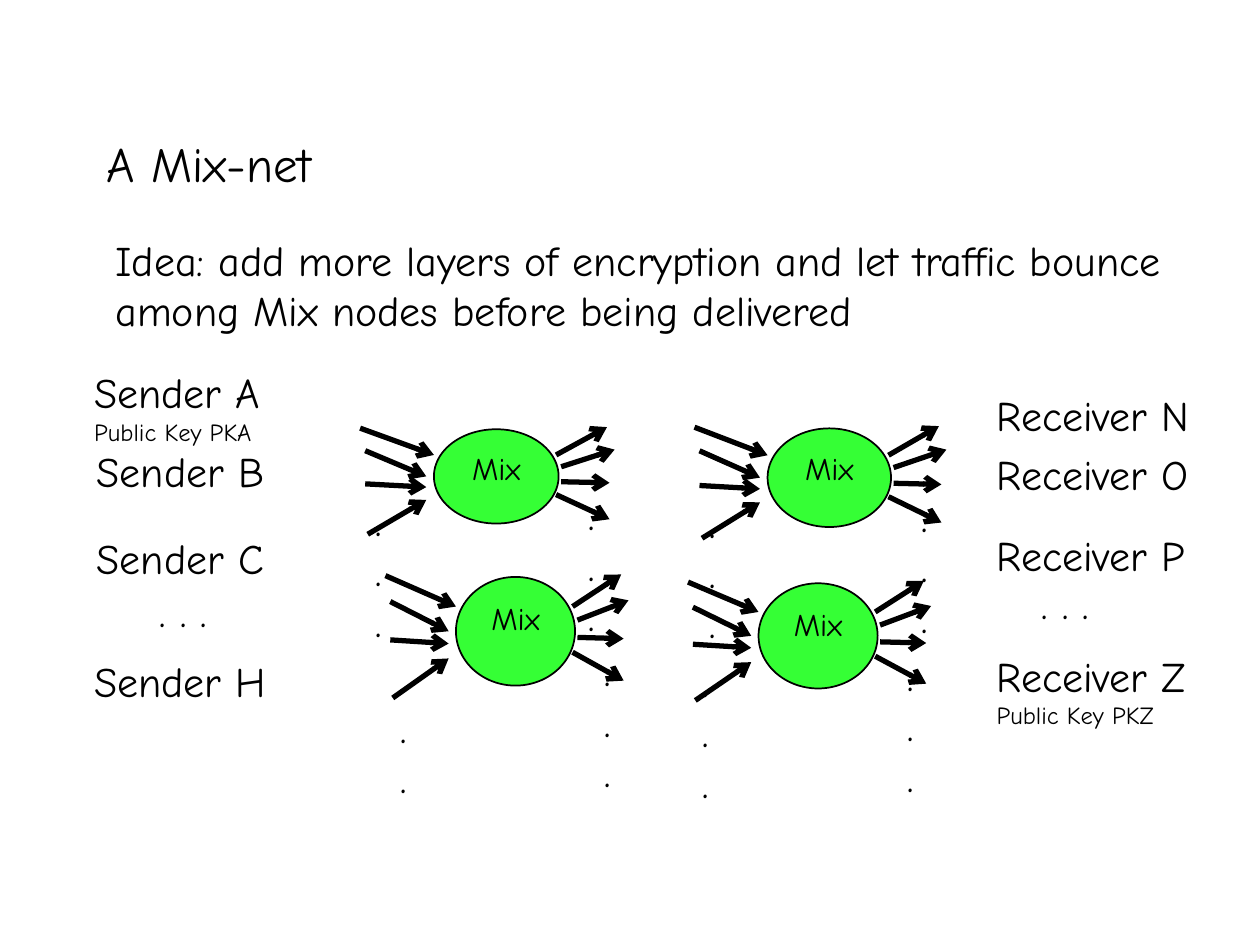
from lxml import etree
from pptx import Presentation
from pptx import util as u
from pptx.dml import color
from pptx.enum import shapes, text
from pptx.oxml import ns

COLORS = {"ink": "000000", "mix": "35FF35", "paper": "FFFFFF"}
FONT = "Comic Neue"
DOTS = ". . ."

# Arrow ends as fractions of a mix node's box: from x, from y, to x, to y
ARROWS = [
    (0, 0.01, 0.29, 0.26), (0.02, 0.22, 0.26, 0.46),
    (0.02, 0.53, 0.26, 0.56), (0.03, 1, 0.26, 0.68),
    (0.79, 0.37, 1, 0.21), (0.77, 0.26, 0.97, 0),
    (0.79, 0.51, 0.98, 0.52), (0.77, 0.63, 0.98, 0.86),
]
DOT_COLUMNS = [(0.01, 0.57), (0.85, 0.52)]

# left, top, width, height in cm
MIX_BOXES = [
    (7.26, 8.61, 5.13, 2.16), (14, 8.59, 5.08, 2.26),
    (13.87, 11.71, 4.9, 2.41), (7.77, 11.58, 4.9, 2.49),
]

# left offset, top in cm, lines
SENDERS = [
    (0, 7.26, ["Sender A", "Public Key PKA"]), (0.05, 8.86, ["Sender B"]),
    (0.05, 10.62, ["Sender C"]), (1.32, 11.68, [DOTS]), (0, 13.08, ["Sender H"]),
]
RECEIVERS = [
    (0, 7.72, ["Receiver N"]), (0, 8.92, ["Receiver O"]),
    (0, 10.54, ["Receiver P"]), (0.91, 11.51, [DOTS]),
    (0, 12.98, ["Receiver Z", "Public Key PKZ"]),
]


def rgb(name):
    return color.RGBColor.from_string(COLORS[name])


def style(para, size):
    for span in para.runs:
        span.font.name = FONT
        span.font.size = u.Pt(size)
        span.font.color.rgb = rgb("ink")


def add_text(parent, place, lines, sizes, anchor=text.MSO_ANCHOR.TOP):
    box = parent.add_textbox(*map(u.Cm, place))
    frame = box.text_frame
    frame.word_wrap = True
    frame.vertical_anchor = anchor
    frame.text = "\n".join(lines)
    for para, size in zip(frame.paragraphs, sizes):
        style(para, size)


def add_arrow(parent, ends):
    arrow = parent.add_connector(shapes.MSO_CONNECTOR.STRAIGHT, *map(u.Cm, ends))
    arrow.line.color.rgb = rgb("ink")
    arrow.line.width = u.Pt(3)
    etree.SubElement(arrow.line._get_or_add_ln(), ns.qn("a:tailEnd"), type="arrow")
    etree.SubElement(arrow._element.spPr, ns.qn("a:effectLst"))


def add_mix_node(page, left, top, width, height):
    """Group a mix ellipse with its arrows in and out and its dot columns."""
    group = page.shapes.add_group_shape().shapes

    def at(x, y):
        return left + x * width, top + y * height

    mix = group.add_shape(
        shapes.MSO_SHAPE.OVAL,
        *map(u.Cm, (*at(0.29, 0.02), 0.49 * width, 0.88 * height)))
    mix.shadow.inherit = False
    mix.fill.solid()
    mix.fill.fore_color.rgb = rgb("mix")
    mix.line.color.rgb = rgb("ink")
    mix.line.width = u.Pt(1)
    mix.text_frame.text = "Mix"
    mix.text_frame.vertical_anchor = text.MSO_ANCHOR.TOP
    para = mix.text_frame.paragraphs[0]
    para.alignment = text.PP_ALIGN.CENTER
    style(para, 18)

    for x1, y1, x2, y2 in ARROWS:
        add_arrow(group, (*at(x1, y1), *at(x2, y2)))
    for x, y in DOT_COLUMNS:
        # The narrow box wraps the dots into a column
        add_text(group, (*at(x, y), 0.74, 0.55), [DOTS], [24])


def add_party_column(page, left, width, parties):
    for offset, top, lines in parties:
        height = 1.27 if len(lines) == 1 else 1.88
        add_text(page.shapes, (left + offset, top, width - offset, height),
                 lines, [24, 14])


def add_heading(page, left, top, width):
    add_text(page.shapes, (left, top, width, 3.18), ["A Mix-net"], [28],
             text.MSO_ANCHOR.MIDDLE)
    idea = ("Idea: add more layers of encryption and let traffic bounce "
            "among Mix nodes before being delivered")
    add_text(page.shapes, (left + 0.18, top + 2.9, 22.2, 2.31), [idea], [24])


def main():
    deck = Presentation()
    deck.slide_width, deck.slide_height = u.Cm(25.4), u.Cm(19.05)
    page = deck.slides.add_slide(deck.slide_layouts[6])
    page.background.fill.solid()
    page.background.fill.fore_color.rgb = rgb("paper")
    add_heading(page, 1.9, 1.7, 21.59)
    for box in MIX_BOXES:
        add_mix_node(page, *box)
    add_party_column(page, 1.65, 4.8, SENDERS)
    add_party_column(page, 19.84, 5.5, RECEIVERS)
    deck.save("out.pptx")


if __name__ == "__main__":
    main()
